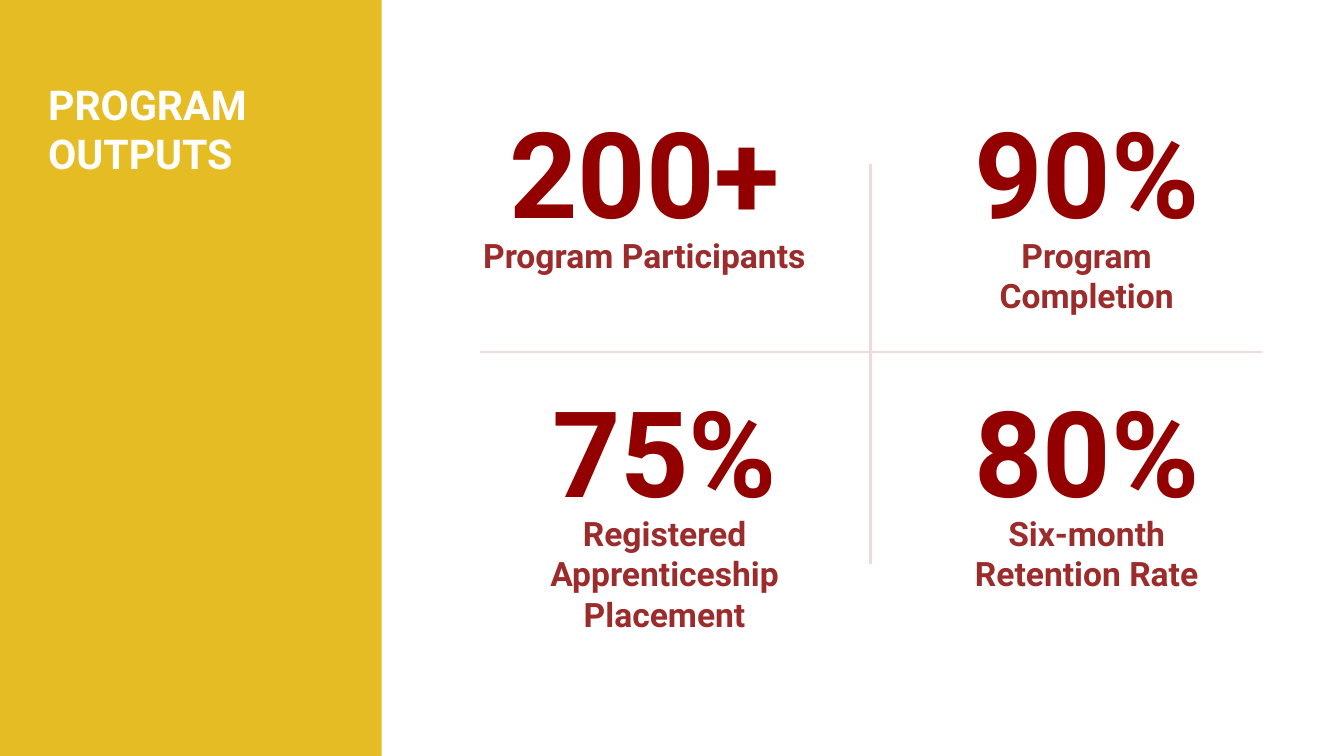
from lxml.etree import SubElement
from pptx import Presentation
from pptx.dml.color import RGBColor
from pptx.enum.shapes import MSO_CONNECTOR, MSO_SHAPE
from pptx.enum.text import MSO_ANCHOR, MSO_AUTO_SIZE, PP_ALIGN
from pptx.oxml.ns import qn
from pptx.util import Pt

COLORS = {
    "panel": "E6BC24",
    "title": "FFFFFF",
    "figure": "920000",
    "label": "9C2B2B",
    "divider": "EFDADA",
}
FIGURE_WIDTH = 173.5
FIGURE_HEIGHT = 83.5
LABEL_OFFSET = 76.2
TOP_ROW, BOTTOM_ROW = 46.1, 195.1
RIGHT_COLUMN = 495.4
STATS = [
    (258.5, TOP_ROW, "200+", "Program Participants", 192.2, 51.1),
    (RIGHT_COLUMN, TOP_ROW, "90%", "Program Completion", 170, 51.1),
    (269.3, BOTTOM_ROW, "75%", "Registered Apprenticeship Placement", 170, 72.7),
    (RIGHT_COLUMN, BOTTOM_ROW, "80%", "Six-month Retention Rate", 170, 51.1),
]


def add_text(slide, box, text, size, color, align, inset):
    frame = slide.shapes.add_textbox(*map(Pt, box)).text_frame
    frame.word_wrap = True
    frame.auto_size = MSO_AUTO_SIZE.NONE
    frame.vertical_anchor = MSO_ANCHOR.TOP
    frame.margin_left = frame.margin_right = Pt(7.2)
    frame.margin_top = frame.margin_bottom = Pt(inset)
    paragraph = frame.paragraphs[0]
    paragraph.text = text
    paragraph.alignment = align
    paragraph.font.name = "Roboto"
    paragraph.font.size = Pt(size)
    paragraph.font.bold = True
    paragraph.font.color.rgb = RGBColor.from_string(COLORS[color])
    return frame


def add_title_panel(slide, left, top, width, height):
    panel = slide.shapes.add_shape(
        MSO_SHAPE.RECTANGLE, Pt(left), Pt(top), Pt(width), Pt(height)
    )
    panel.shadow.inherit = False
    panel.fill.solid()
    panel.fill.fore_color.rgb = RGBColor.from_string(COLORS["panel"])
    panel.line.fill.background()
    title_box = (left + 18.7, top + 35.3, 164.9, 343.4)
    add_text(slide, title_box, "PROGRAM\vOUTPUTS", 22, "title", PP_ALIGN.LEFT, 7.2)


def add_stat(slide, left, top, figure, label, label_width, label_height):
    figure_box = (left, top, FIGURE_WIDTH, FIGURE_HEIGHT)
    figure_frame = add_text(
        slide, figure_box, figure, 64, "figure", PP_ALIGN.CENTER, 7.2
    )
    figure_frame.paragraphs[0].space_after = Pt(12)
    label_left = left + (FIGURE_WIDTH - label_width) / 2
    label_box = (label_left, top + LABEL_OFFSET, label_width, label_height)
    label_frame = add_text(
        slide, label_box, label, 18, "label", PP_ALIGN.CENTER, 3.6
    )
    label_frame.auto_size = MSO_AUTO_SIZE.SHAPE_TO_FIT_TEXT


def add_divider(slide, *ends):
    divider = slide.shapes.add_connector(MSO_CONNECTOR.STRAIGHT, *map(Pt, ends))
    divider.line.color.rgb = RGBColor.from_string(COLORS["divider"])
    divider.line.width = Pt(1.5)
    SubElement(divider.element.spPr, qn("a:effectLst"))


def add_cross(slide, left, top, width, height):
    middle = left + width / 2
    level = top + 100.8
    add_divider(slide, left, level, left + width, level)
    add_divider(slide, middle, top, middle, top + height)


def main():
    presentation = Presentation()
    presentation.slide_width = Pt(720)
    presentation.slide_height = Pt(405)
    slide = presentation.slides.add_slide(presentation.slide_layouts[6])
    add_title_panel(slide, 0, 0, 204.5, 405)
    for stat in STATS:
        add_stat(slide, *stat)
    add_cross(slide, 257, 87.8, 419, 214.6)
    presentation.save("out.pptx")


if __name__ == "__main__":
    main()
